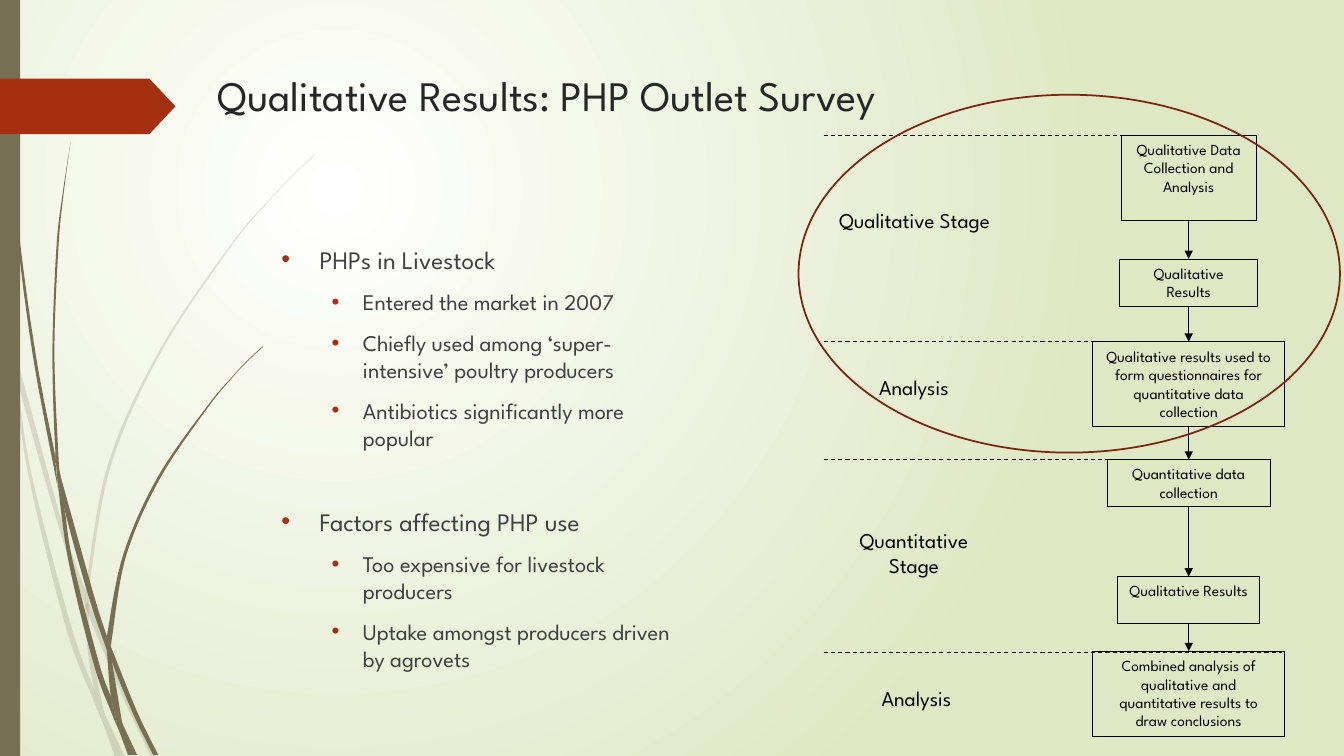
import pptx
import pptx.dml.color
import pptx.enum.dml
import pptx.enum.shapes
import pptx.enum.text
import pptx.oxml
import pptx.oxml.ns
import pptx.util
import lxml.etree

Inches, Pt = pptx.util.Inches, pptx.util.Pt
SHAPES = pptx.enum.shapes.MSO_SHAPE
ALIGN = pptx.enum.text.PP_ALIGN
qn = pptx.oxml.ns.qn

FONT = "League Spartan"
COLORS = {
    "white": "FFFFFF", "green": "DFE8C4", "olive": "766F54", "red": "A53010",
    "title": "262626", "body": "404040", "black": "000000", "ellipse": "7A240C",
}

TITLE = "Qualitative Results: PHP Outlet Survey"
BULLETS = [
    (0, "PHPs in Livestock", 0),
    (1, "Entered the market in 2007", 10),
    (1, "Chiefly used among ‘super-intensive’ poultry producers", 10),
    (1, "Antibiotics significantly more popular", 10),
    (0, "Factors affecting PHP use", 39.5),
    (1, "Too expensive for livestock producers", 10),
    (1, "Uptake amongst producers driven by agrovets", 10),
]
BULLET_LEVELS = [(0.38, -0.38, 18), (0.81, -0.31, 16)]

FLOW_CENTER = 11.79
FLOW_STEPS = [
    ("Qualitative Data Collection and Analysis", 1.34, 1.34, 0.85),
    ("Qualitative Results", 2.57, 1.37, 0.47),
    ("Qualitative results used to form questionnaires for quantitative data collection", 3.39, 1.91, 0.84),
    ("Quantitative data collection", 4.56, 1.62, 0.47),
    ("Qualitative Results", 5.72, 1.41, 0.47),
    ("Combined analysis of qualitative and quantitative results to draw conclusions", 6.46, 1.91, 0.85),
]
DIVIDER_LEFT = 8.17
DIVIDERS = [(1.34, 12.45), (3.39, 12.72), (4.56, 12.59), (6.47, 12.72)]
STAGE_LABELS = [
    ("Qualitative Stage", 8.21, 2.01, 1.72, 0.61),
    ("Analysis", 8.56, 3.67, 1.01, 0.35),
    ("Quantitative Stage", 8.25, 5.18, 1.63, 0.61),
    ("Analysis", 8.5, 6.75, 1.18, 0.35),
]

# Each blade lists its smooth edges; corners lie where one edge meets the next.
PALE_BLADES = [
    [[(0.11, 3.5), (0.09, 3.22), (0, 2.82)], [(0, 2.99), (0.1, 3.44), (0.11, 3.5)]],
    [[(0.14, 3.45), (0.17, 3.76), (0.58, 5.22), (0.84, 5.99)], [(0.85, 5.86), (0.62, 5.2), (0.14, 3.45)]],
    [[(0.88, 5.96), (0.88, 6.1), (1.23, 6.94), (1.5, 7.51)], [(1.55, 7.51), (1.27, 6.92), (0.92, 6.07), (0.88, 5.96)]],
    [[(1.19, 7.51), (1.24, 7.51)], [(1.05, 7.11), (1.19, 7.51)]],
    [[(0.93, 6.83), (0.7, 6.19), (0.31, 4.69), (0.17, 3.76), (0.11, 3.5)],
     [(0.11, 3.5), (0.28, 4.7), (0.65, 6.21), (0.92, 6.93), (1.01, 7.14)], [(0.99, 7.07), (0.93, 6.83)]],
    [[(0.84, 5.99), (0.87, 6.46), (0.93, 6.83), (0.96, 6.92), (1.05, 7.11)],
     [(1.03, 7.06), (0.91, 6.46), (0.88, 6.1), (0.88, 6.08), (0.84, 5.99)]],
    [[(0.88, 5.84), (1.1, 4.62), (1.6, 3.49), (2.29, 2.45), (2.68, 1.98), (2.9, 1.75), (3.12, 1.54)],
     [(3.12, 1.53), (2.89, 1.75), (2.68, 1.97), (2.28, 2.44), (1.58, 3.48), (1.07, 4.61), (0.85, 5.84)],
     [(0.85, 5.86), (0.88, 5.96)]],
    [[(1.01, 7.14), (1.14, 7.51)], [(1.19, 7.51), (1.01, 7.14)]],
    [[(0.88, 6.08), (0.88, 6.1), (0.88, 5.96)], [(0.85, 5.86), (0.84, 5.99), (0.88, 6.08)]],
    [[(0.96, 6.92), (0.93, 6.83)], [(0.99, 7.07), (1.01, 7.14), (1.19, 7.51)], [(1.05, 7.11), (0.96, 6.92)]],
]
DARK_BLADES = [
    [[(0.03, 0), (0.04, 0.48), (0.07, 1.1), (0.17, 2.33), (0.33, 3.55), (0.56, 4.77), (0.57, 4.81)],
     [(0.55, 4.57), (0.55, 4.53), (0.36, 3.55), (0.19, 2.32), (0.08, 1.09), (0.05, 0.48), (0.04, 0)]],
    [[(0.6, 4.72), (0.64, 5.05), (0.88, 5.92), (1.06, 6.45)], [(1.06, 6.33), (1.06, 6.31), (0.93, 5.9), (0.6, 4.72)]],
    [[(1.1, 6.41), (1.11, 6.56), (1.32, 7.08), (1.52, 7.49)], [(1.57, 7.49), (1.36, 7.06), (1.13, 6.49), (1.1, 6.41)]],
    [[(1.1, 6.91), (0.98, 6.57), (0.72, 5.56), (0.64, 5.05), (0.57, 4.77)],
     [(0.57, 4.77), (0.68, 5.57), (0.93, 6.59), (1.11, 7.08), (1.17, 7.22)], [(1.16, 7.17), (1.1, 6.91)]],
    [[(0.6, 4.72), (0.58, 4.53), (0.54, 3.49), (0.58, 2.45), (0.63, 1.93), (0.7, 1.41)],
     [(0.7, 1.41), (0.62, 1.93), (0.56, 2.45), (0.52, 3.49), (0.55, 4.49), (0.6, 4.72)]],
    [[(1.33, 7.49), (1.36, 7.49)], [(1.22, 7.19), (1.33, 7.49)]],
    [[(0.57, 4.77), (0.64, 5.05)], [(0.6, 4.72), (0.55, 4.49)], [(0.55, 4.53), (0.57, 4.77)]],
    [[(1.11, 6.33), (1.25, 5.52), (1.58, 4.76), (2.05, 4.06), (2.31, 3.74), (2.45, 3.59), (2.61, 3.44)],
     [(2.6, 3.44), (2.45, 3.58), (2.31, 3.73), (2.04, 4.05), (1.56, 4.74), (1.22, 5.51), (1.06, 6.31)],
     [(1.1, 6.41), (1.11, 6.33)]],
    [[(1.17, 7.22), (1.27, 7.49)], [(1.31, 7.49), (1.17, 7.22)]],
    [[(1.06, 6.45), (1.1, 6.91), (1.16, 7.06), (1.22, 7.19)], [(1.21, 7.16), (1.11, 6.56), (1.09, 6.51), (1.06, 6.45)]],
    [[(1.06, 6.45), (1.09, 6.51), (1.11, 6.56)], [(1.1, 6.41), (1.06, 6.31), (1.06, 6.33), (1.06, 6.45)]],
    [[(1.16, 7.06), (1.1, 6.91)], [(1.16, 7.17), (1.17, 7.22), (1.3, 7.49)],
     [(1.33, 7.49), (1.22, 7.19), (1.16, 7.06)]],
]


def rgb(name):
    return pptx.dml.color.RGBColor.from_string(COLORS[name])


def box(*lengths):
    return [Inches(length) for length in lengths]


def place(shape, *lengths):
    shape.left, shape.top, shape.width, shape.height = box(*lengths)


def style_font(paragraph, size, color):
    paragraph.font.name = FONT
    paragraph.font.size = Pt(size)
    paragraph.font.color.rgb = rgb(color)


def style_shape(shape, fill=None, line=None, width=0.75):
    shape.shadow.inherit = False
    if fill:
        shape.fill.solid()
        shape.fill.fore_color.rgb = rgb(fill)
    else:
        shape.fill.background()
    if line:
        shape.line.color.rgb = rgb(line)
        shape.line.width = Pt(width)
    else:
        shape.line.fill.background()


def write_centered(shape, text, size):
    frame = shape.text_frame
    frame.word_wrap = True
    frame.vertical_anchor = pptx.enum.text.MSO_ANCHOR.TOP
    paragraph = frame.paragraphs[0]
    paragraph.text = text
    paragraph.alignment = ALIGN.CENTER
    style_font(paragraph, size, "black")


def add_line(shapes, x1, y1, x2, y2):
    line = shapes.add_connector(pptx.enum.shapes.MSO_CONNECTOR.STRAIGHT, *box(x1, y1, x2, y2))
    line.line.color.rgb = rgb("black")
    line.line.width = Pt(0.75)
    lxml.etree.SubElement(line._element.spPr, qn("a:effectLst"))
    return line


def curve_points(edge):
    padded = [edge[0], *edge, edge[-1]]
    for a, b, c, d in zip(padded, padded[1:], padded[2:], padded[3:]):
        yield [q + (r - p) / 6 for p, q, r in zip(a, b, c)]
        yield [r - (s - q) / 6 for q, r, s in zip(b, c, d)]
        yield c


def add_blade(shapes, edges, alpha):
    points = []
    for edge in edges:
        if points and points[-1] != edge[0]:
            points += [points[-1], edge[0], edge[0]]
        points += curve_points(edge)
    builder = shapes.build_freeform(*box(*edges[0][0]))
    builder.add_line_segments([box(*point) for point in points], close=True)
    blade = builder.convert_to_shape()
    style_shape(blade, "olive")
    segments = list(blade._element.iter(qn("a:lnTo")))
    for first in range(0, len(segments), 3):
        curve = lxml.etree.Element(qn("a:cubicBezTo"))
        segments[first].addprevious(curve)
        for segment in segments[first:first + 3]:
            curve.append(segment[0])
            segment.getparent().remove(segment)
    if alpha < 100:
        color = blade._element.spPr.find(qn("a:solidFill"))[0]
        lxml.etree.SubElement(color, qn("a:alpha"), val=str(alpha * 1000))


def add_background(slide):
    fill = slide.background.fill
    fill.gradient()
    for stop, name in zip(fill.gradient_stops, ("white", "green")):
        stop.color.rgb = rgb(name)
    linear = next(slide.element.iter(qn("a:lin")))
    gradient = linear.getparent()
    gradient.remove(linear)
    circle = lxml.etree.SubElement(gradient, qn("a:path"), path="circle")
    lxml.etree.SubElement(circle, qn("a:fillToRect"), l="50000", t="50000", r="100000", b="100000")


def add_decoration(shapes):
    for blades, alpha in ((PALE_BLADES, 20), (DARK_BLADES, 100)):
        for edges in blades:
            add_blade(shapes, edges, alpha)
    style_shape(shapes.add_shape(SHAPES.RECTANGLE, *box(0, 0, 0.2, 7.5)), "olive")
    arrow = shapes.add_shape(SHAPES.PENTAGON, *box(0, 0.78, 1.74, 0.55))
    arrow.adjustments[0] = 0.47
    style_shape(arrow, "red")


def fill_placeholders(title, body):
    place(title, 2.06, 0.64, 7.63, 1.4)
    place(body, 2.69, 2.37, 4.24, 4.13)
    for placeholder in (title, body):
        placeholder.text_frame.auto_size = pptx.enum.text.MSO_AUTO_SIZE.NONE
        placeholder.text_frame.vertical_anchor = pptx.enum.text.MSO_ANCHOR.TOP
    heading = title.text_frame.paragraphs[0]
    heading.text = TITLE
    heading.alignment = ALIGN.LEFT
    style_font(heading, 30, "title")
    frame = body.text_frame
    for index, (level, text, before) in enumerate(BULLETS):
        paragraph = frame.add_paragraph() if index else frame.paragraphs[0]
        paragraph.text = text
        paragraph.level = level
        margin, indent, size = BULLET_LEVELS[level]
        properties = paragraph._p.get_or_add_pPr()
        properties.set("marL", str(Inches(margin)))
        properties.set("indent", str(Inches(indent)))
        color = lxml.etree.SubElement(properties, qn("a:buClr"))
        lxml.etree.SubElement(color, qn("a:srgbClr"), val=COLORS["red"])
        lxml.etree.SubElement(properties, qn("a:buFont"), typeface="Arial")
        lxml.etree.SubElement(properties, qn("a:buChar"), char="•")
        paragraph.space_before = Pt(before)
        style_font(paragraph, size, "body")


def add_flow(shapes):
    steps = []
    for text, top, width, height in FLOW_STEPS:
        step = shapes.add_shape(SHAPES.RECTANGLE, *box(FLOW_CENTER - width / 2, top, width, height))
        style_shape(step, line="black")
        write_centered(step, text, 11)
        steps.append(step)
    for upper, lower in zip(steps, steps[1:]):
        arrow = add_line(shapes, 0, 0, 0, 0)
        arrow.begin_connect(upper, 2)
        arrow.end_connect(lower, 0)
        lxml.etree.SubElement(arrow.line._get_or_add_ln(), qn("a:tailEnd"), type="triangle")
    for text, *bounds in STAGE_LABELS:
        write_centered(shapes.add_textbox(*box(*bounds)), text, 15)
    for top, right in DIVIDERS:
        divider = add_line(shapes, DIVIDER_LEFT, top, right, top)
        divider.line.dash_style = pptx.enum.dml.MSO_LINE.DASH


def main():
    presentation = pptx.Presentation()
    presentation.slide_width, presentation.slide_height = box(13.33, 7.5)
    slide = presentation.slides.add_slide(presentation.slide_layouts[1])
    add_background(slide)
    add_decoration(slide.shapes)
    fill_placeholders(slide.shapes.title, slide.placeholders[1])
    add_flow(slide.shapes)
    ellipse = slide.shapes.add_shape(SHAPES.OVAL, *box(7.92, 0.94, 5.37, 3.55))
    style_shape(ellipse, line="ellipse", width=1.25)
    presentation.save("out.pptx")


if __name__ == "__main__":
    main()
